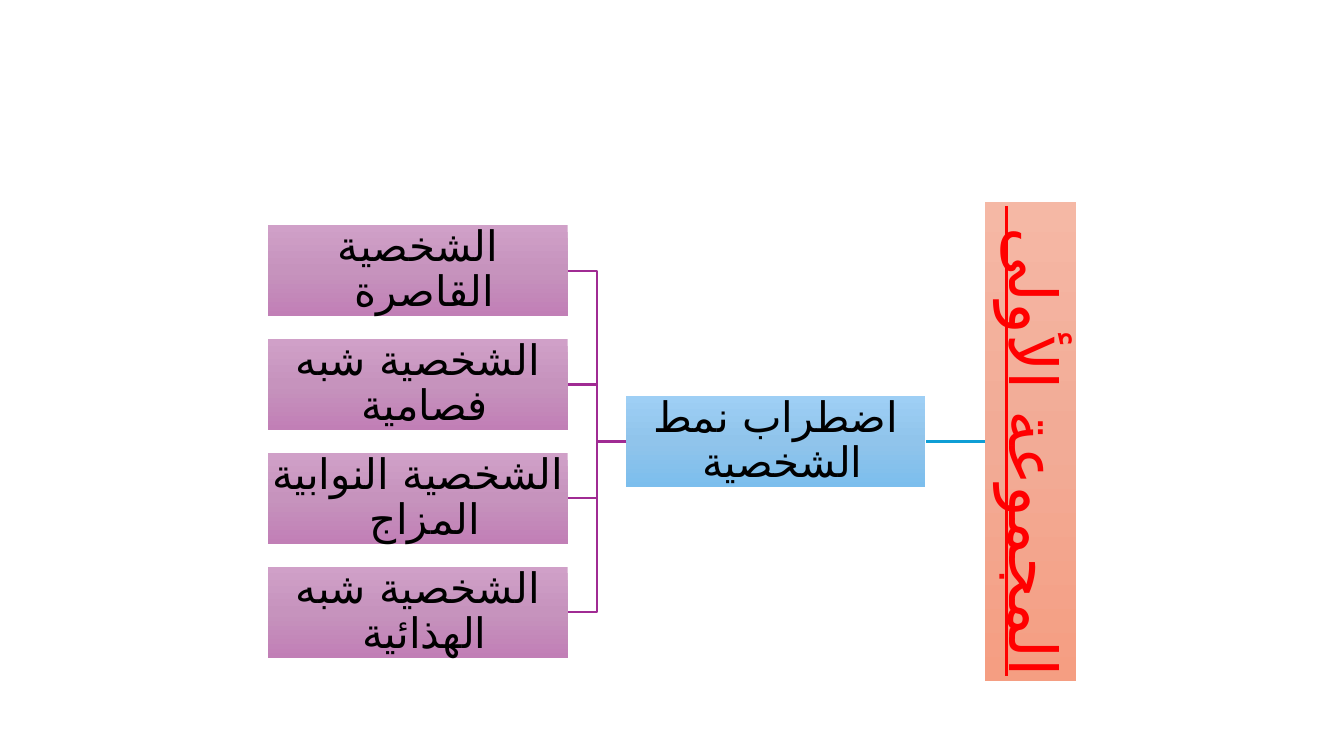
"""Builds a right-to-left tree of personality pattern disorders."""
from copy import deepcopy

from lxml.etree import SubElement
from pptx import Presentation
from pptx.dml.color import RGBColor
from pptx.enum.shapes import MSO_CONNECTOR, MSO_SHAPE
from pptx.enum.text import MSO_ANCHOR, PP_ALIGN
from pptx.oxml.ns import qn
from pptx.util import Inches, Pt

COLORS = {
    "group": ["F5B8A5", "F2AB96", "F59E82"],
    "pattern": ["9ECFF5", "90C4EB", "7CBEED"],
    "trait": ["D0A0C8", "C693BD", "C17FB6"],
    "group_line": "0F9ED5",
    "trait_line": "A02B93",
    "group_text": "FF0000",
    "text": "000000",
}
ARABIC_FONT = "DejaVu Sans"
BOX_WIDTH, BOX_HEIGHT = 2.97, 0.9
MIDDLE = 4.38
ROW_STEP = 1.13
TRAIT_LEFT, PATTERN_LEFT, GROUP_LEFT = 2.66, 6.21, 7.84
GROUP_LENGTH = 4.76


def add_box(left, middle, width, label, level, size=30, font="Cabin", color="text", inset=0.02):
    box = slide.shapes.add_shape(
        MSO_SHAPE.RECTANGLE, Inches(left), Inches(middle - BOX_HEIGHT / 2),
        Inches(width), Inches(BOX_HEIGHT))
    box.shadow.inherit = False
    box.line.fill.background()
    box.fill.gradient()
    box.fill.gradient_angle = 270
    gradient = box._element.spPr.find(qn("a:gradFill"))
    gradient.set("rotWithShape", "0")
    stops = gradient.find(qn("a:gsLst"))
    stops.insert(1, deepcopy(stops[0]))
    for stop, position, shade in zip(box.fill.gradient_stops, (0, 0.5, 1), COLORS[level]):
        stop.position = position
        stop.color.rgb = RGBColor.from_string(shade)

    frame = box.text_frame
    frame.word_wrap = True
    frame.vertical_anchor = MSO_ANCHOR.MIDDLE
    frame.margin_left = frame.margin_right = Inches(inset)
    frame.margin_top = frame.margin_bottom = Inches(inset)
    frame.text = label
    paragraph = frame.paragraphs[0]
    paragraph.alignment = PP_ALIGN.CENTER
    paragraph.line_spacing = 0.9
    paragraph._p.get_or_add_pPr().set("rtl", "1")
    run = paragraph.runs[0]
    run.font.size = Pt(size)
    run.font.color.rgb = RGBColor.from_string(COLORS[color])
    run.font.name = font
    SubElement(run.font._element, qn("a:cs"), typeface=ARABIC_FONT)
    return box


def add_link(kind, start, start_side, end, end_side, color):
    link = slide.shapes.add_connector(kind, 0, 0, 0, 0)
    link.begin_connect(start, start_side)
    link.end_connect(end, end_side)
    link.line.width = Pt(1.5)
    link.line.color.rgb = RGBColor.from_string(COLORS[color])
    SubElement(link._element.spPr, qn("a:effectLst"))
    return link


presentation = Presentation()
presentation.slide_width = Inches(13.33)
presentation.slide_height = Inches(7.5)
slide = presentation.slides.add_slide(presentation.slide_layouts[6])

group = add_box(GROUP_LEFT, MIDDLE, GROUP_LENGTH, "المجموعة الأولى ", "group",
                size=47, font="Lato", color="group_text", inset=0.03)
group.rotation = 90
group.text_frame.paragraphs[0].runs[0].font.underline = True

pattern = add_box(PATTERN_LEFT, MIDDLE, BOX_WIDTH, "اضطراب نمط الشخصية ", "pattern")
group_link = add_link(MSO_CONNECTOR.STRAIGHT, group, 2, pattern, 3, "group_line")
group_link.begin_x = Inches(GROUP_LEFT + (GROUP_LENGTH - BOX_HEIGHT) / 2)
group_link.begin_y = Inches(MIDDLE)

traits = [
    "الشخصية القاصرة ",
    "الشخصية شبه فصامية ",
    "الشخصية النوابية المزاج ",
    "الشخصية شبه الهذائية ",
]
for row, label in enumerate(traits):
    row_middle = MIDDLE + (row - (len(traits) - 1) / 2) * ROW_STEP
    trait = add_box(TRAIT_LEFT, row_middle, BOX_WIDTH, label, "trait")
    add_link(MSO_CONNECTOR.ELBOW, pattern, 1, trait, 3, "trait_line")

presentation.save("out.pptx")
